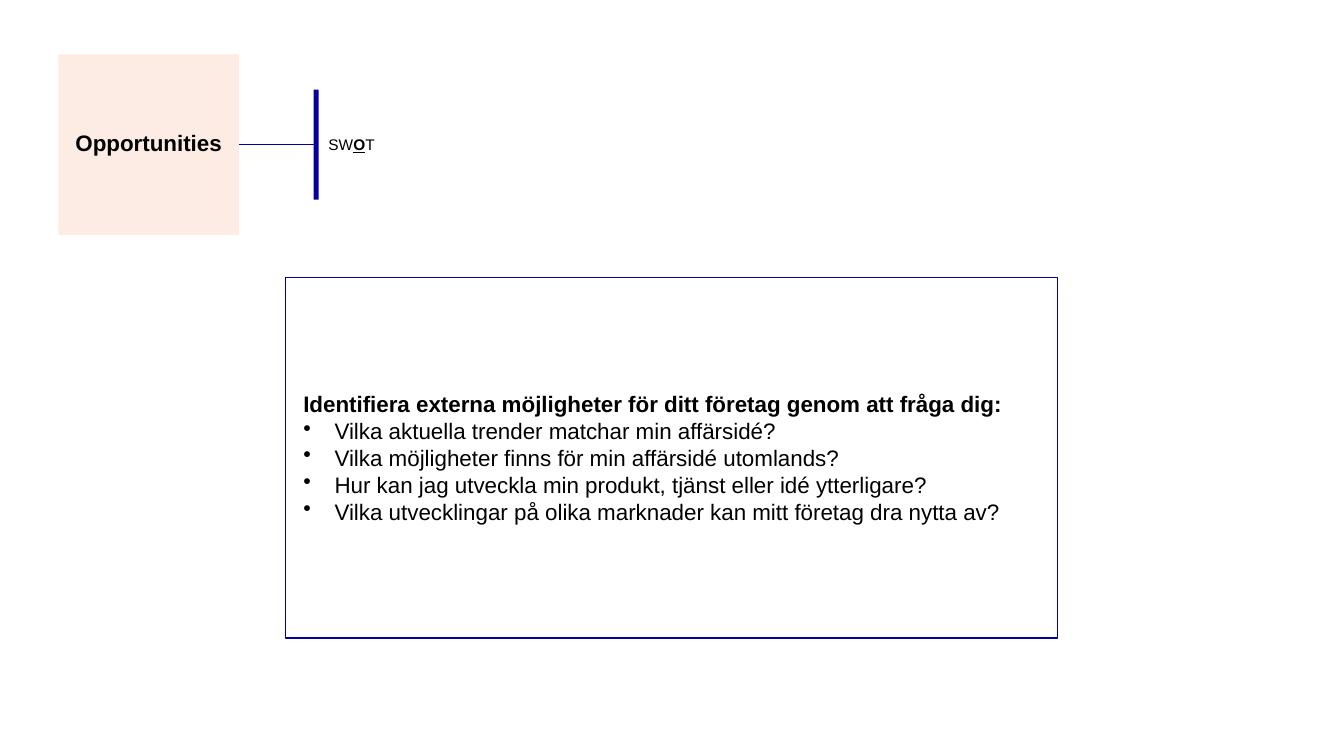
from dataclasses import dataclass
from typing import Optional

import pptx
import pptx.dml.color
import pptx.enum.shapes
import pptx.enum.text
import pptx.oxml
import pptx.util
from lxml import etree

Inches = pptx.util.Inches
Pt = pptx.util.Pt
RGBColor = pptx.dml.color.RGBColor
PP_ALIGN = pptx.enum.text.PP_ALIGN
MSO_ANCHOR = pptx.enum.text.MSO_ANCHOR

NAVY = RGBColor(0x03, 0x00, 0x9F)
PEACH = RGBColor(0xFD, 0xEC, 0xE3)
BLACK = RGBColor(0x00, 0x00, 0x00)
FONT = "Arial"

HEADING = "Identifiera externa möjligheter för ditt företag genom att fråga dig:"
QUESTIONS = [
    "Vilka aktuella trender matchar min affärsidé?",
    "Vilka möjligheter finns för min affärsidé utomlands?",
    "Hur kan jag utveckla min produkt, tjänst eller idé ytterligare?",
    "Vilka utvecklingar på olika marknader kan mitt företag dra nytta av?",
]


@dataclass
class Box:
    left: float
    top: float
    width: float
    height: float
    fill: Optional[RGBColor] = None
    line: Optional[RGBColor] = None


QUESTION_BOX = Box(2.83, 2.75, 7.66, 3.58, line=NAVY)
TITLE_SQUARE = Box(0.58, 0.54, 1.79, 1.79, fill=PEACH)
ACCENT_BAR = Box(3.11, 0.89, 0.05, 1.09, fill=NAVY)
SWOT_LABEL = Box(3.16, 1.29, 1.86, 0.29)


def add_box(slide, box: Box):
    shape = slide.shapes.add_shape(
        pptx.enum.shapes.MSO_SHAPE.RECTANGLE,
        Inches(box.left), Inches(box.top), Inches(box.width), Inches(box.height))
    shape.shadow.inherit = False
    if box.fill is None:
        shape.fill.background()
    else:
        shape.fill.solid()
        shape.fill.fore_color.rgb = box.fill
    if box.line is None:
        shape.line.fill.background()
    else:
        shape.line.color.rgb = box.line
        shape.line.width = Pt(1)
    return shape


def style_paragraph(paragraph, size: float, bold: Optional[bool] = None,
                    alignment=PP_ALIGN.LEFT) -> None:
    paragraph.alignment = alignment
    paragraph.font.name = FONT
    paragraph.font.size = Pt(size)
    paragraph.font.color.rgb = BLACK
    paragraph.font.bold = bold


def indent(paragraph, left: float, first: float = 0, bullet: str = "") -> None:
    properties = paragraph._p.get_or_add_pPr()
    properties.set("marL", str(Inches(left)))
    properties.set("indent", str(Inches(first)))
    if bullet:
        mark = etree.Element(pptx.oxml.ns.qn("a:buChar"), char=bullet)
        # The bullet goes before the default run properties
        properties.find(pptx.oxml.ns.qn("a:defRPr")).addprevious(mark)


def add_questions(slide) -> None:
    frame = add_box(slide, QUESTION_BOX).text_frame
    frame.word_wrap = True
    frame.vertical_anchor = MSO_ANCHOR.MIDDLE
    heading = frame.paragraphs[0]
    heading.text = HEADING
    style_paragraph(heading, 16, bold=True)
    indent(heading, 0.08)
    for question in QUESTIONS:
        paragraph = frame.add_paragraph()
        paragraph.text = question
        style_paragraph(paragraph, 16, bold=False)
        indent(paragraph, 0.39, -0.31, "•")


def add_title_square(slide):
    square = add_box(slide, TITLE_SQUARE)
    frame = square.text_frame
    frame.word_wrap = True
    frame.vertical_anchor = MSO_ANCHOR.MIDDLE
    frame.margin_left = frame.margin_right = 0
    title = frame.paragraphs[0]
    title.text = "Opportunities"
    title.line_spacing = 0.9
    style_paragraph(title, 16, bold=True, alignment=PP_ALIGN.CENTER)
    return square


def add_swot_label(slide) -> None:
    box = SWOT_LABEL
    label = slide.shapes.add_textbox(
        Inches(box.left), Inches(box.top), Inches(box.width), Inches(box.height))
    frame = label.text_frame
    frame.word_wrap = True
    frame.auto_size = pptx.enum.text.MSO_AUTO_SIZE.SHAPE_TO_FIT_TEXT
    paragraph = frame.paragraphs[0]
    style_paragraph(paragraph, 11)
    for text in ("SW", "O", "T"):
        run = paragraph.add_run()
        run.text = text
        run.font.bold = run.font.underline = text == "O"


def join(slide, bar, square) -> None:
    connector = slide.shapes.add_connector(
        pptx.enum.shapes.MSO_CONNECTOR.STRAIGHT, 0, 0, 0, 0)
    connector.begin_connect(bar, 1)
    connector.end_connect(square, 3)
    connector.line.color.rgb = NAVY
    connector.line.width = Pt(1)
    etree.SubElement(connector._element.spPr, pptx.oxml.ns.qn("a:effectLst"))


def main() -> None:
    presentation = pptx.Presentation()
    presentation.slide_width = Inches(13.33)
    presentation.slide_height = Inches(7.5)
    slide = presentation.slides.add_slide(presentation.slide_layouts[6])

    # Questions in the framed box
    add_questions(slide)

    # Title square joined to the accent bar and its label
    square = add_title_square(slide)
    add_swot_label(slide)
    bar = add_box(slide, ACCENT_BAR)
    join(slide, bar, square)

    presentation.save("out.pptx")


if __name__ == "__main__":
    main()
